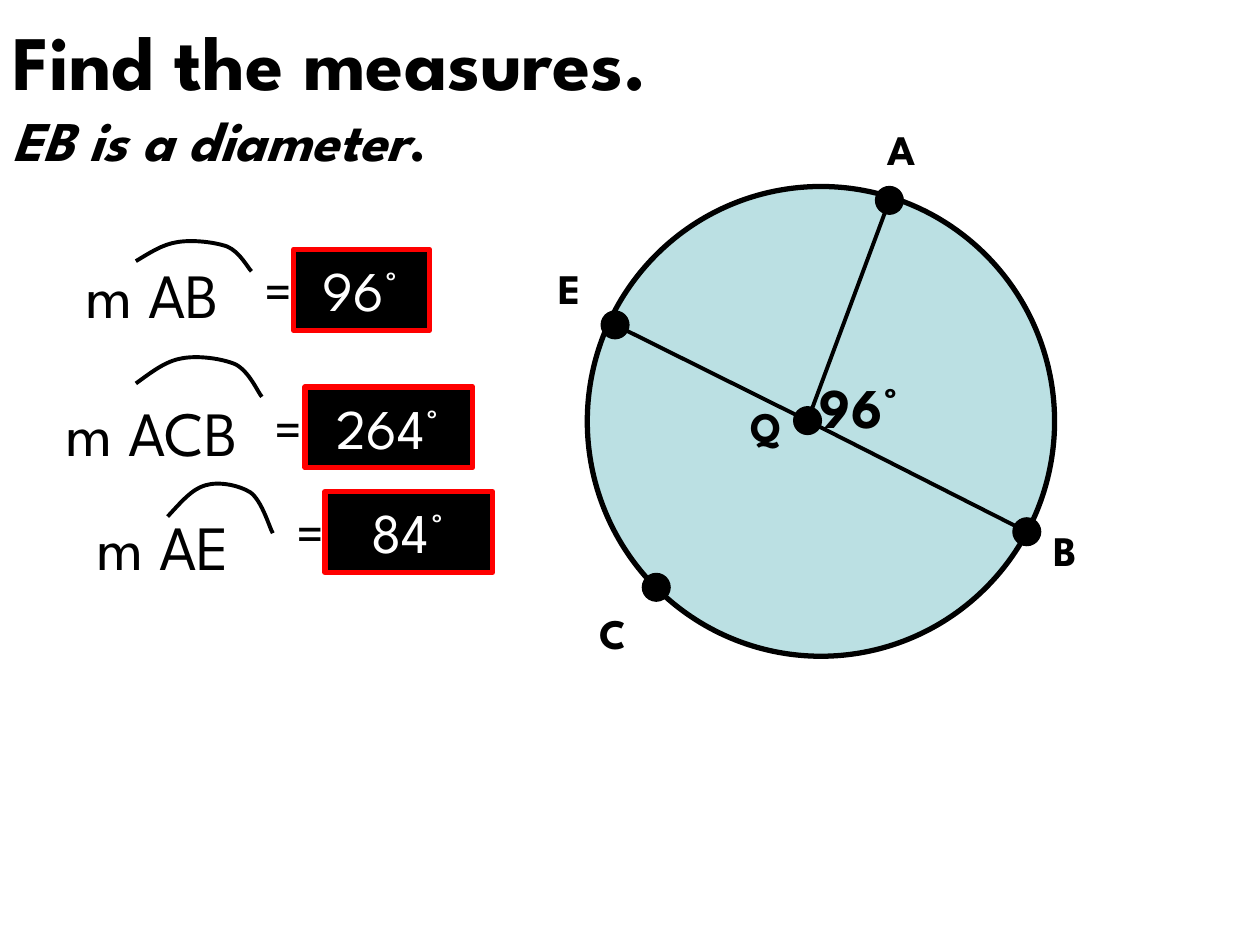
from lxml.etree import SubElement
from pptx import Presentation
from pptx.dml.color import RGBColor
from pptx.enum.shapes import MSO_CONNECTOR, MSO_SHAPE
from pptx.enum.text import MSO_ANCHOR, MSO_AUTO_SIZE, PP_ALIGN
from pptx.oxml.ns import qn
from pptx.util import Cm, Pt

FONT = "League Spartan"
BLACK, WHITE, RED, PALE_BLUE = "000000", "FFFFFF", "FF0000", "BBE0E3"


def paint(sp, line, width, fill=None):
    """Set outline and fill, and remove the theme shadow."""
    sp.line.color.rgb = RGBColor.from_string(line)
    sp.line.width = Pt(width)
    if sp in connectors:
        SubElement(sp._element.spPr, qn("a:effectLst"))
        return
    sp.shadow.inherit = False
    if fill:
        sp.fill.solid()
        sp.fill.fore_color.rgb = RGBColor.from_string(fill)
    else:
        sp.fill.background()


def write(sp, text, size, color=BLACK, align=PP_ALIGN.LEFT, **font):
    """Put one line of text at the top of a shape, with half a line before it."""
    tf = sp.text_frame
    frame = {"word_wrap": True, "vertical_anchor": MSO_ANCHOR.TOP,
             "auto_size": MSO_AUTO_SIZE.SHAPE_TO_FIT_TEXT}
    for name, value in frame.items():
        setattr(tf, name, value)
    p = tf.paragraphs[0]
    p.alignment = align
    before = SubElement(p._p.get_or_add_pPr(), qn("a:spcBef"))
    SubElement(before, qn("a:spcPct")).set("val", "50000")
    r = p.add_run()
    r.text = text
    for name, value in {"name": FONT, "size": Pt(size), **font}.items():
        setattr(r.font, name, value)
    r.font.color.rgb = RGBColor.from_string(color)


prs = Presentation()
prs.slide_width, prs.slide_height = Cm(25.4), Cm(19.05)
slide = prs.slides.add_slide(prs.slide_layouts[6])
shapes = slide.shapes
connectors = []

# Circle with centre Q: centre of each dot, then top left of its label
points = {
    "A": (17.93, 4.04, 17.65, 2.36),
    "B": (20.7, 10.72, 20.98, 10.44),
    "C": (13.23, 11.84, 11.84, 12.12),
    "E": (12.4, 6.55, 11, 5.16),
    "Q": (16.28, 8.48, 14.88, 7.95),
}
circle = shapes.add_shape(MSO_SHAPE.OVAL, Cm(11.84), Cm(3.76), Cm(9.42), Cm(9.47))
paint(circle, BLACK, 3, PALE_BLUE)

qx, qy = points["Q"][:2]
for end in "ABE":
    x, y = points[end][:2]
    radius = shapes.add_connector(MSO_CONNECTOR.STRAIGHT, Cm(qx), Cm(qy), Cm(x), Cm(y))
    connectors.append(radius)
    paint(radius, BLACK, 2.25)

dot = 0.56
for name, (x, y, label_x, label_y) in points.items():
    sp = shapes.add_shape(MSO_SHAPE.OVAL, Cm(x - dot / 2), Cm(y - dot / 2), Cm(dot), Cm(dot))
    paint(sp, BLACK, 0.75, BLACK)
    label = shapes.add_textbox(Cm(label_x), Cm(label_y), Cm(1.65), Cm(1.68))
    write(label, name, 24, bold=True)
angle = shapes.add_textbox(Cm(16.28), Cm(7.39), Cm(3.05), Cm(2.13))
write(angle, "96°", 32, bold=True)

# Arc sign as a unit curve: the start, then three Bezier points per segment
arc_curve = [(0, 0.68), (0.12, 0.42), (0.23, 0.15), (0.36, 0.08), (0.49, 0),
             (0.68, 0.08), (0.79, 0.22), (0.9, 0.39), (0.97, 0.9), (1, 1)]

# Text, its left, top and width; arc box; top of answer, left of "=",
# left and width of answer box, answer
rows = [
    ("m AB", (1.47, 5.03, 4.01), (2.74, 4.83, 2.33, 0.64), 5.03, 5.08, 5.92, 2.74, "96°"),
    ("m ACB", (1.07, 7.8, 5.28), (2.74, 7.16, 2.54, 0.84), 7.8, 5.28, 6.15, 3.38, "264°"),
    ("m AE", (1.7, 10.11, 4.01), (3.38, 9.7, 2.12, 1.05), 9.91, 5.72, 6.55, 3.38, "84°"),
]
for text, (x, y, w), (ax, ay, aw, ah), top, equals_x, box_x, box_w, answer in rows:
    write(shapes.add_textbox(Cm(x), Cm(y), Cm(w), Cm(1.78)), text, 36)

    start, *rest = [(Cm(ax + u * aw), Cm(ay + v * ah)) for u, v in arc_curve]
    builder = shapes.build_freeform(*start)
    builder.add_line_segments(rest, close=False)
    arc = builder.convert_to_shape()
    paint(arc, BLACK, 2.25)
    outline = arc._element.find(".//" + qn("a:path"))
    for i, segment in enumerate(outline.findall(qn("a:lnTo"))):
        if i % 3 == 0:
            curve = SubElement(outline, qn("a:cubicBezTo"))
        curve.append(segment[0])
        outline.remove(segment)

    write(shapes.add_textbox(Cm(equals_x), Cm(top), Cm(box_w), Cm(1.6)), "=", 32)
    box = shapes.add_shape(MSO_SHAPE.RECTANGLE, Cm(box_x), Cm(top), Cm(box_w), Cm(1.63))
    paint(box, RED, 3, BLACK)
    write(box, answer, 32, WHITE, PP_ALIGN.CENTER)

# Heading
tf = shapes.add_textbox(0, 0, Cm(22.86), Cm(3.76)).text_frame
tf.word_wrap = True
tf.vertical_anchor = MSO_ANCHOR.MIDDLE
p = tf.paragraphs[0]
for text, size, italic in [("Find the measures.", 44, False),
                           ("EB is a diameter", 32, True), (".", 32, False)]:
    r = p.add_run()
    r.text = text
    for name, value in {"name": FONT, "size": Pt(size), "bold": True, "italic": italic}.items():
        setattr(r.font, name, value)
    r.font.color.rgb = RGBColor.from_string(BLACK)
    if size == 44:
        p.add_line_break()

prs.save("out.pptx")
